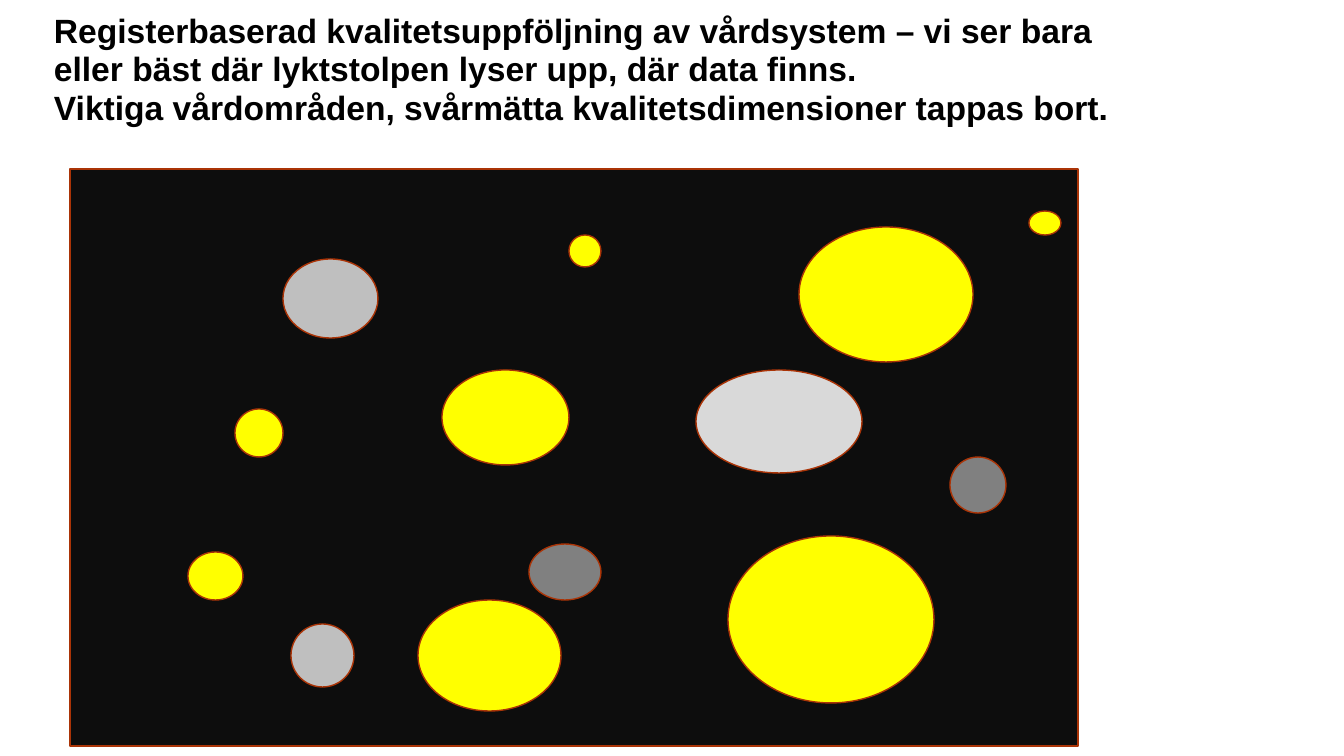
import pptx
import pptx.util
import pptx.dml.color
import pptx.enum.shapes
import pptx.enum.text

TITLE = [
    "Registerbaserad kvalitetsuppföljning av vårdsystem – vi ser bara eller bäst där lyktstolpen lyser upp, där data finns.",
    "Viktiga vårdområden, svårmätta kvalitetsdimensioner tappas bort.",
]
TITLE_BOX = (44, 8, 1126, 140)
NIGHT = (70, 169, 1008, 577)
SPOTS = [
    ("silver", 283, 259, 95, 79),
    ("lit", 799, 227, 174, 135),
    ("lit", 442, 370, 127, 95),
    ("lit", 188, 552, 55, 48),
    ("lit", 1029, 211, 32, 24),
    ("lit", 728, 536, 206, 167),
    ("lit", 235, 409, 48, 48),
    ("lit", 569, 235, 32, 32),
    ("dim", 950, 457, 56, 56),
    ("silver", 291, 624, 63, 63),
    ("dim", 529, 544, 72, 56),
    ("lit", 418, 600, 143, 111),
    ("pale", 696, 370, 166, 103),
]
THEME = {
    "font": "Arial", "size": 24, "text": "000000",
    "night": "0D0D0D", "line": "AA3407",
    "lit": "FFFF00", "silver": "BFBFBF", "dim": "808080", "pale": "D9D9D9",
}
SCALE = 914400 / 100.8
SHAPE = pptx.enum.shapes.MSO_SHAPE


def px(*lengths):
    return [pptx.util.Emu(round(n * SCALE)) for n in lengths]


def color(name):
    return pptx.dml.color.RGBColor.from_string(THEME[name])


def add_text(s, box, lines, *, size, fill, bold=False, spacing=1.0):
    tf = s.shapes.add_textbox(*px(*box)).text_frame
    tf.word_wrap = True
    tf.vertical_anchor = pptx.enum.text.MSO_ANCHOR.TOP
    p = tf.paragraphs[0]
    p.line_spacing = spacing
    p.text = "\v".join(lines)
    for r in p.runs:
        r.font.name = THEME["font"]
        r.font.size = pptx.util.Pt(size)
        r.font.bold = bold
        r.font.color.rgb = color(fill)


def add_area(s, kind, box, fill):
    sp = s.shapes.add_shape(kind, *px(*box))
    sp.shadow.inherit = False
    sp.fill.solid()
    sp.fill.fore_color.rgb = color(fill)
    sp.line.color.rgb = color("line")
    sp.line.width = pptx.util.Pt(1)


def main():
    prs = pptx.Presentation()
    prs.slide_width, prs.slide_height = px(1344, 756)
    s = prs.slides.add_slide(prs.slide_layouts[6])
    add_text(s, TITLE_BOX, TITLE, size=THEME["size"], fill="text", bold=True, spacing=0.95)
    add_area(s, SHAPE.RECTANGLE, NIGHT, "night")
    for fill, *box in SPOTS:
        add_area(s, SHAPE.OVAL, box, fill)
    prs.save("out.pptx")


if __name__ == "__main__":
    main()
